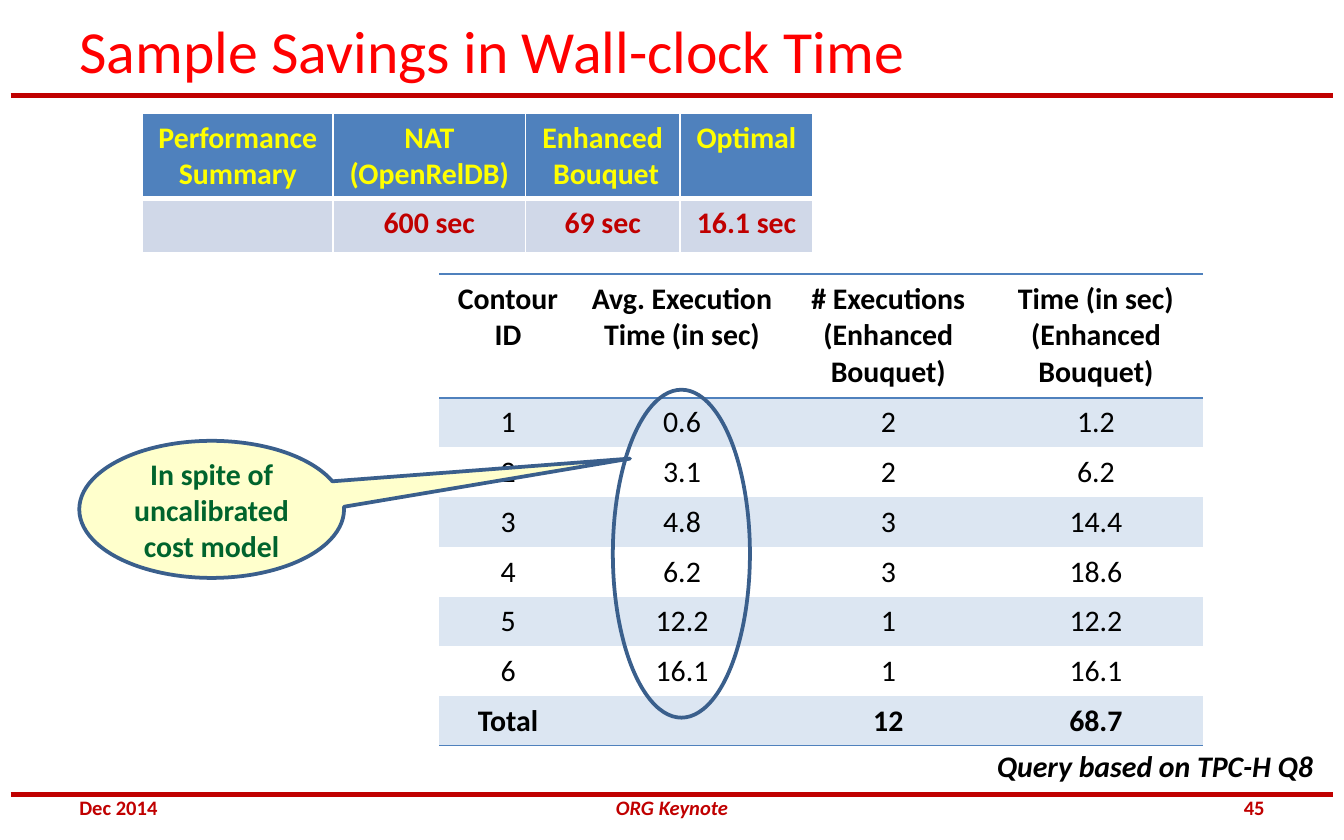
from lxml import etree
from pptx import Presentation
from pptx.dml.color import RGBColor
from pptx.enum.shapes import MSO_CONNECTOR, MSO_SHAPE
from pptx.enum.text import MSO_ANCHOR, PP_ALIGN
from pptx.oxml.ns import qn
from pptx.util import Inches, Pt

LEFT, MID, RIGHT = PP_ALIGN.LEFT, PP_ALIGN.CENTER, PP_ALIGN.RIGHT
ANCHOR = MSO_ANCHOR.MIDDLE
OVAL, BUBBLE = MSO_SHAPE.OVAL, MSO_SHAPE.OVAL_CALLOUT
STRAIGHT = MSO_CONNECTOR.STRAIGHT

RED, BLUE, WHITE, NAVY = "C00000", "4F81BD", "FFFFFF", "3A5F8C"
PALE, TINT = "D0D8E8", "DCE6F2"
PLAIN_STYLE = "{2D5ABB26-0587-4C30-8999-92F81FD0307C}"

SUMMARY = [
    ["Performance Summary", "NAT\n(OpenRelDB)", "Enhanced\n Bouquet", "Optimal"],
    ["", "600 sec", "69 sec", "16.1 sec"],
]
CONTOURS = [
    ["Contour ID", "Avg. Execution Time (in sec)",
     "# Executions\n(Enhanced Bouquet)", "Time (in sec)\n(Enhanced Bouquet)"],
    ["1", "0.6", "2", "1.2"],
    ["2", "3.1", "2", "6.2"],
    ["3", "4.8", "3", "14.4"],
    ["4", "6.2", "3", "18.6"],
    ["5", "12.2", "1", "12.2"],
    ["6", "16.1", "1", "16.1"],
    ["Total", "", "12", "68.7"],
]


def color(code):
    return RGBColor.from_string(code)


def write(frame, text, align=LEFT, size=16, ink="000000", **style):
    frame.text = text
    for para in frame.paragraphs:
        para.alignment = align
        look = {"name": "Calibri", "size": Pt(size), **style}
        for key, value in look.items():
            setattr(para.font, key, value)
        para.font.color.rgb = color(ink)


def label(slide, box, text, wrap=True, inset=(0.09, 0.04), **style):
    frame = slide.shapes.add_textbox(*map(Inches, box)).text_frame
    side, end = map(Inches, inset)
    form = {"word_wrap": wrap, "vertical_anchor": ANCHOR,
            "margin_left": side, "margin_right": side,
            "margin_top": end, "margin_bottom": end}
    for key, value in form.items():
        setattr(frame, key, value)
    write(frame, text, **style)


def rule(slide, left, top, width):
    line = slide.shapes.add_connector(
        STRAIGHT, *map(Inches, (left, top, left + width, top)))
    line.line.color.rgb = color(RED)
    line.line.width = Pt(2.75)
    etree.SubElement(line._element.spPr, qn("a:effectLst"))


def edge(cell, sides):
    """Draw cell borders; sides maps L, R, T, B, in that order, to (hex, points)."""
    props = cell._tc.get_or_add_tcPr()
    for side, (code, width) in sides.items():
        line = etree.SubElement(props, qn(f"a:ln{side}"), w=str(Pt(width)))
        fill = etree.SubElement(line, qn("a:solidFill"))
        etree.SubElement(fill, qn("a:srgbClr"), val=code)


def grid(slide, box, data, cols, rows, style):
    """Add a table; style(row) gives its text format, borders and fill."""
    frame = slide.shapes.add_table(len(data), len(cols), *map(Inches, box))
    table = frame.table
    table._tbl.tblPr.find(qn("a:tableStyleId")).text = PLAIN_STYLE
    for col, width in zip(table.columns, cols):
        col.width = Inches(width)
    for r, (row, height) in enumerate(zip(data, rows)):
        table.rows[r].height = Inches(height)
        look, sides, fill = style(r)
        for c, text in enumerate(row):
            cell = table.cell(r, c)
            write(cell.text_frame, text, MID, **look)
            edge(cell, sides)
            if fill:
                cell.fill.solid()
                cell.fill.fore_color.rgb = color(fill)
            else:
                cell.fill.background()


def summary(slide, box):
    thin, thick = (WHITE, 1), (WHITE, 3)

    def style(r):
        sides = {"L": thin, "R": thin, "T": thick if r else thin,
                 "B": thin if r else thick}
        look = {"ink": RED if r else "FFFF00", "bold": True}
        return look, sides, PALE if r else BLUE

    grid(slide, box, SUMMARY, [1.42, 1.43, 1.15, 0.99], [0.63, 0.41], style)


def contours(slide, box):
    last = len(CONTOURS) - 1
    thin = (BLUE, 1)

    def style(r):
        sides = {0: {"T": thin, "B": thin}, last: {"B": thin}}.get(r, {})
        return {"bold": r in (0, last)}, sides, TINT if r % 2 else None

    rows = [0.92] + [0.37] * last
    grid(slide, box, CONTOURS, [1.02, 1.57, 1.5, 1.59], rows, style)


def outline(slide, kind, box, fill=None):
    shape = slide.shapes.add_shape(kind, *map(Inches, box))
    shape.shadow.inherit = False
    shape.line.color.rgb = color(NAVY)
    shape.line.width = Pt(2)
    if fill:
        shape.fill.solid()
        shape.fill.fore_color.rgb = color(fill)
    else:
        shape.fill.background()
    return shape


def callout(slide, box):
    shape = outline(slide, BUBBLE, box, "FFFFCC")
    shape.adjustments[0], shape.adjustments[1] = 1.58, -0.37
    shape.text_frame.vertical_anchor = ANCHOR
    write(shape.text_frame, "In spite of uncalibrated cost model", MID,
          ink="00642D", bold=True)


def header(slide, left, top, width):
    label(slide, (left + 0.42, top, 9, 0.5), "Sample Savings in Wall-clock Time",
          size=32, ink="FF0000")
    rule(slide, left, top + 0.59, width)


def footer(slide, left, top, width):
    rule(slide, left, top, width)
    parts = [
        (0.42, 2.33, "Dec 2014", LEFT, False),
        (3.13, 3.58, "ORG Keynote", MID, True),
        (7.09, 2.33, "45", RIGHT, False),
    ]
    for x, wide, text, align, slant in parts:
        label(slide, (left + x, top - 0.03, wide, 0.25), text, align=align,
              size=11, ink=RED, bold=True, italic=slant)


def main():
    deck = Presentation()
    deck.slide_width, deck.slide_height = Inches(10), Inches(6.25)
    slide = deck.slides.add_slide(deck.slide_layouts[6])

    # Title and footer bands
    header(slide, 0.08, 0.12, 9.84)
    footer(slide, 0.08, 5.91, 9.84)

    # Tables
    contours(slide, (3.27, 2.04, 5.68, 3.51))
    summary(slide, (1.06, 0.84, 4.99, 1.04))

    # Remarks on the tables
    outline(slide, OVAL, (4.56, 2.9, 1.02, 2.44))
    callout(slide, (0.59, 3.28, 1.97, 1.02))
    label(slide, (7.27, 5.51, 2.66, 0.37), " Query based on TPC-H Q8",
          wrap=False, inset=(0.1, 0.05), bold=True, italic=True)

    deck.save("out.pptx")


if __name__ == "__main__":
    main()
